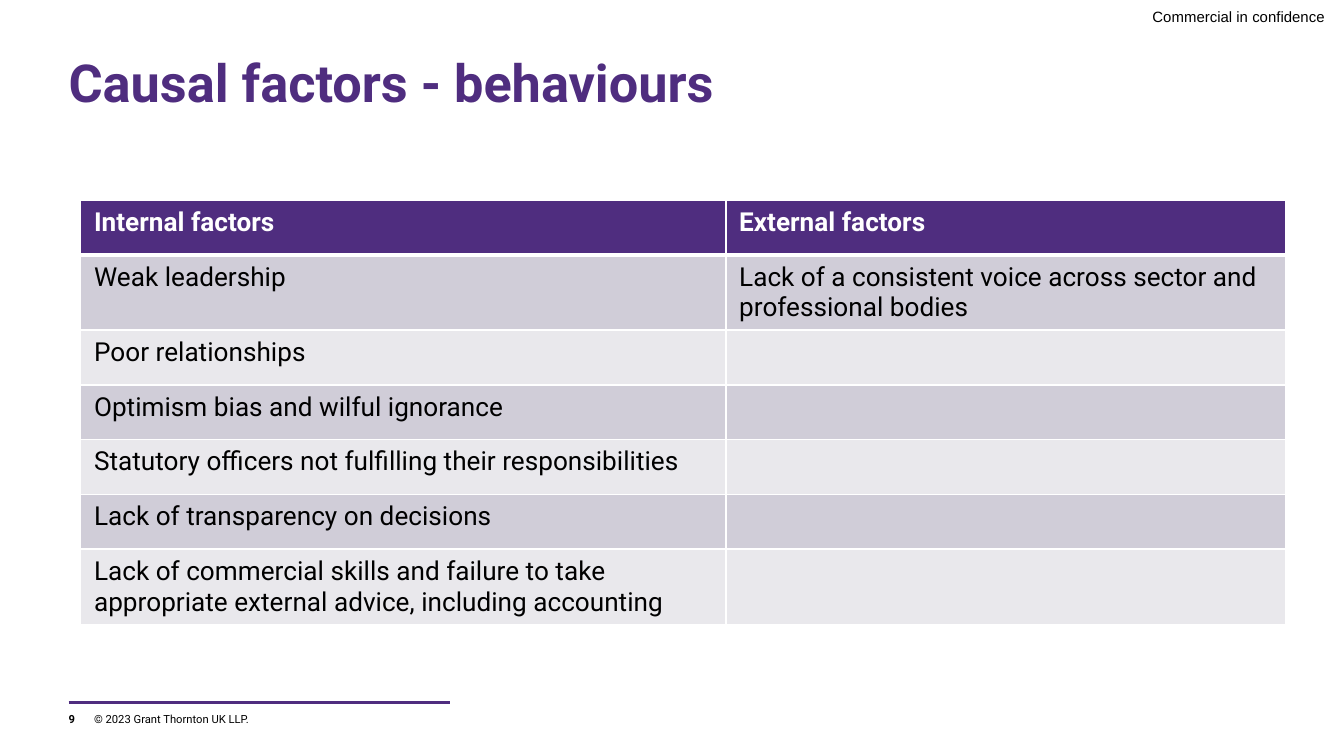
from dataclasses import dataclass

from lxml import etree
from pptx import Presentation
from pptx.dml.color import RGBColor
from pptx.enum.shapes import MSO_CONNECTOR
from pptx.enum.text import MSO_ANCHOR, MSO_AUTO_SIZE, PP_ALIGN
from pptx.oxml.ns import qn
from pptx.util import Inches, Pt

STRAIGHT = MSO_CONNECTOR.STRAIGHT
TOP, MIDDLE = MSO_ANCHOR.TOP, MSO_ANCHOR.MIDDLE
NO_AUTOFIT = MSO_AUTO_SIZE.NONE
LEFT, RIGHT = PP_ALIGN.LEFT, PP_ALIGN.RIGHT


@dataclass(frozen=True)
class Theme:
    """Fonts, colours and type sizes of the slide."""
    font: str = "Roboto"
    marking_font: str = "Arial"
    purple: str = "4F2D7F"
    white: str = "FFFFFF"
    black: str = "000000"
    bands: tuple = ("D0CDD8", "E9E8EC")
    title: int = 28
    body: int = 14
    marking: int = 8
    footer: int = 6


THEME = Theme()
ROWS = [
    ("Internal factors", "External factors"),
    ("Weak leadership",
     "Lack of a consistent voice across sector and professional bodies"),
    ("Poor relationships", ""),
    ("Optimism bias and wilful ignorance", ""),
    ("Statutory officers not fulfilling their responsibilities", ""),
    ("Lack of transparency on decisions", ""),
    ("Lack of commercial skills and failure to take appropriate external "
     "advice, including accounting", ""),
]


def write(tf, text, size, color=THEME.black, bold=False, name=THEME.font, align=LEFT):
    """Write one formatted paragraph and return it."""
    p = tf.paragraphs[0]
    p.alignment = align
    r = p.add_run()
    r.text = text
    for key, value in {"name": name, "size": Pt(size), "bold": bold}.items():
        setattr(r.font, key, value)
    r.font.color.rgb = RGBColor.from_string(color)
    return p


def set_frame(tf, **extra):
    """Give a text frame zero margins, wrapping and any extra settings."""
    values = {"margin_left": 0, "margin_top": 0, "margin_right": 0,
              "margin_bottom": 0, "word_wrap": True,
              "auto_size": NO_AUTOFIT, "vertical_anchor": TOP}
    for key, value in (values | extra).items():
        setattr(tf, key, value)


def add_text(s, box, text, size, frame=None, **font):
    """Add a text box of one paragraph."""
    sp = s.shapes.add_textbox(*map(Inches, box))
    set_frame(sp.text_frame, **(frame or {}))
    write(sp.text_frame, text, size, **font)


def place_title(s, box, text):
    """Move and format the title placeholder."""
    sp = s.shapes.title
    sp.left, sp.top, sp.width, sp.height = map(Inches, box)
    set_frame(sp.text_frame)
    p = write(sp.text_frame, text, THEME.title, color=THEME.purple, bold=True)
    p.line_spacing = 0.9


def add_marking(s, box, text):
    """Add the confidentiality marking at the right of its box."""
    frame = {"vertical_anchor": MIDDLE, "margin_right": Inches(0.14)}
    add_text(s, box, text, THEME.marking, frame,
             name=THEME.marking_font, align=RIGHT)


def add_footer(s, box, number, notice):
    """Add the footer rule, slide number and copyright line."""
    x, y, w, h = box
    rule = s.shapes.add_connector(
        STRAIGHT, *map(Inches, (x, y, x + 2.84, y)))
    rule.line.color.rgb = RGBColor.from_string(THEME.purple)
    rule.line.width = Pt(1.5)
    etree.SubElement(rule._element.spPr, qn("a:effectLst"))
    text_y, text_h = y + 0.07, h - 0.07
    add_text(s, (x, text_y, 0.18, text_h), number, THEME.footer, bold=True)
    add_text(s, (x + 0.19, text_y, w - 0.19, text_h), notice, THEME.footer)


def set_borders(cell, widths):
    """Draw white cell borders with the given widths in points."""
    tc_pr = cell._tc.get_or_add_tcPr()
    for side, width in widths.items():
        ln = etree.SubElement(tc_pr, qn(f"a:ln{side}"), w=str(Pt(width)))
        fill = etree.SubElement(ln, qn("a:solidFill"))
        etree.SubElement(fill, qn("a:srgbClr"), val=THEME.white)


def add_factors_table(s, box, rows, first_width):
    """Add the banded table of internal and external factors."""
    x, y, w, h = box
    table = s.shapes.add_table(
        len(rows), len(rows[0]), *map(Inches, box)).table
    for column, width in zip(table.columns, (first_width, w - first_width)):
        column.width = Inches(width)
    for i, texts in enumerate(rows):
        table.rows[i].height = Inches(h / len(rows))
        header = i == 0
        fill = THEME.purple if header else THEME.bands[(i - 1) % 2]
        widths = {"L": 1, "R": 1, "T": 3 if i == 1 else 1, "B": 3 if header else 1}
        for cell, text in zip(table.rows[i].cells, texts):
            set_borders(cell, widths)
            cell.fill.solid()
            cell.fill.fore_color.rgb = RGBColor.from_string(fill)
            if text:
                write(cell.text_frame, text, THEME.body, bold=header,
                      color=THEME.white if header else THEME.black)


def build_slide(prs):
    """Build the slide on behavioural causal factors."""
    s = prs.slides.add_slide(prs.slide_layouts[5])
    place_title(s, (0.51, 0.43, 8.98, 0.87), "Causal factors - behaviours")
    add_marking(s, (8.44, 0, 1.56, 0.24), "Commercial in confidence")
    add_factors_table(s, (0.6, 1.49, 8.97, 2.85), ROWS, 4.8)
    add_footer(s, (0.51, 5.23, 4.5, 0.17), "9", "© 2023 Grant Thornton UK LLP.")


def main():
    """Create and save the presentation."""
    prs = Presentation()
    prs.slide_width, prs.slide_height = Inches(10), Inches(10 * 9 / 16)
    build_slide(prs)
    prs.save("out.pptx")


if __name__ == "__main__":
    main()
